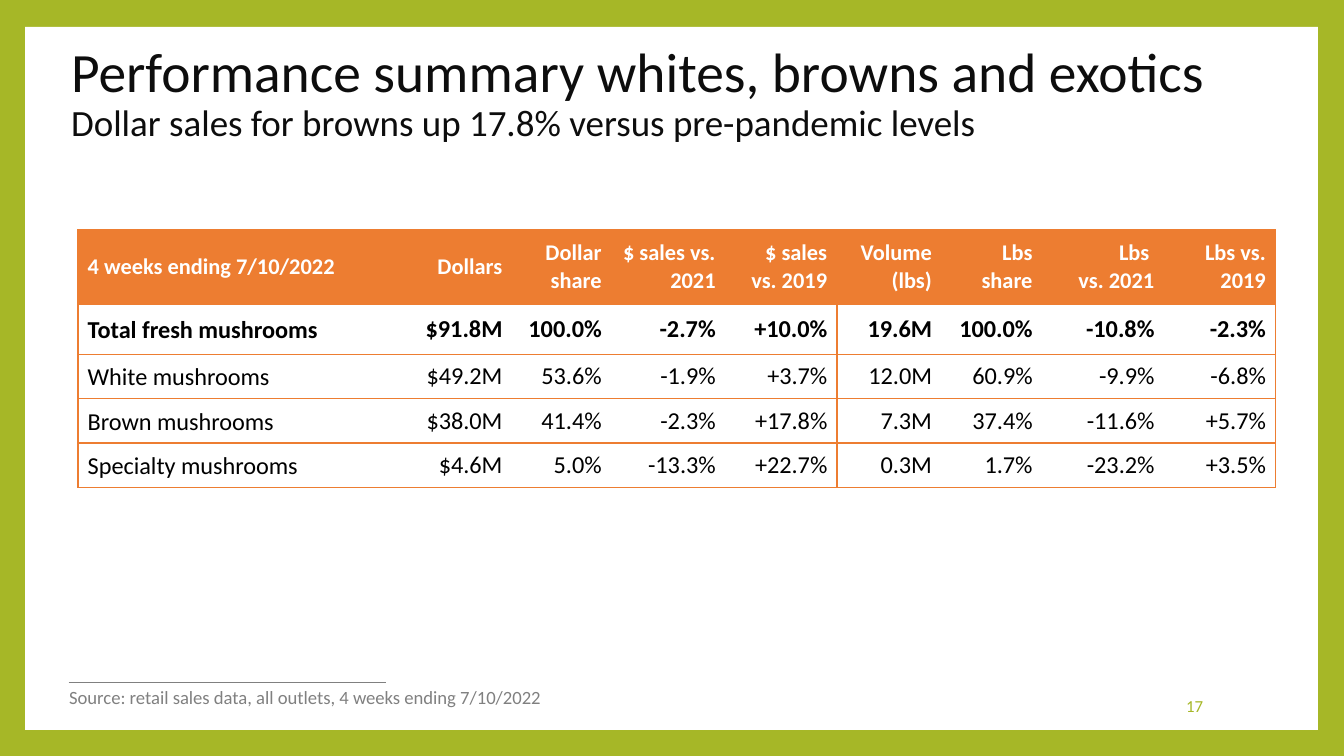
from lxml import etree
from pptx import Presentation
from pptx import util as u
from pptx.dml.color import RGBColor
from pptx.enum import shapes, text
from pptx.oxml import ns

GREEN, ORANGE, GREY = "A6B727", "ED7D31", "808080"
WHITE, BLACK, TITLE_COLOR = "FFFFFF", "000000", "0D0D0D"
LEFT, RIGHT = text.PP_ALIGN.LEFT, text.PP_ALIGN.RIGHT


def color(value):
    return RGBColor.from_string(value)


def write(frame, content, sizes, font_color, bold=False, align=LEFT, spacing=None):
    """Newlines part paragraphs, vertical tabs part lines; sizes go line by line."""
    frame.vertical_anchor = text.MSO_ANCHOR.MIDDLE
    for index, lines in enumerate(content.split("\n")):
        paragraph = frame.add_paragraph() if index else frame.paragraphs[0]
        paragraph.alignment = align
        paragraph.line_spacing = spacing
        for number, line in enumerate(lines.split("\v")):
            if number:
                paragraph.add_line_break()
            run = paragraph.add_run()
            run.text = line
            run.font.name = "Calibri"
            run.font.size = u.Pt(sizes[number % len(sizes)])
            run.font.bold = bold
            run.font.color.rgb = color(font_color)


presentation = Presentation()
presentation.slide_width, presentation.slide_height = u.Pt(720), u.Pt(405)
slide = presentation.slides.add_slide(presentation.slide_layouts[6])
slide.background.fill.solid()
slide.background.fill.fore_color.rgb = color(GREEN)

panel = slide.shapes.add_shape(
    shapes.MSO_SHAPE.RECTANGLE, u.Pt(13.5), u.Pt(14.4), u.Pt(692.5), u.Pt(376.6))
panel.shadow.inherit = False
panel.fill.solid()
panel.fill.fore_color.rgb = color(WHITE)
panel.line.fill.background()

source_rule = slide.shapes.add_connector(
    shapes.MSO_CONNECTOR.STRAIGHT, u.Pt(36.8), u.Pt(365.6), u.Pt(206.8), u.Pt(365.6))
source_rule.line.color.rgb = color(GREY)
source_rule.line.width = u.Pt(0.79)
etree.SubElement(source_rule._element.spPr, ns.qn("a:effectLst"))

# Left, top, width, height, wrap, content, sizes, colour, alignment, line spacing
text_boxes = [
    (31, 22.3, 674.6, 56.9, True,
     "Performance summary whites, browns and exotics\v"
     "Dollar sales for browns up 17.8% versus pre-pandemic levels",
     [29.7, 19.8], TITLE_COLOR, LEFT, 0.9),
    (550.8, 367.2, 100.8, 21.6, True, "17", [9], GREEN, RIGHT, None),
    (30, 363.8, 276.5, 19.4, False,
     "Source: retail sales data, all outlets, 4 weeks ending 7/10/2022",
     [10], GREY, LEFT, None),
]
for left, top, width, height, wrap, content, sizes, font_color, align, spacing in text_boxes:
    box = slide.shapes.add_textbox(u.Pt(left), u.Pt(top), u.Pt(width), u.Pt(height))
    box.text_frame.word_wrap = wrap
    write(box.text_frame, content, sizes, font_color, align=align, spacing=spacing)

rows = [
    ["4 weeks ending 7/10/2022", "Dollars", "Dollar share", "$ sales vs. 2021",
     "$ sales vs. 2019", "Volume (lbs)", "Lbs\nshare", "Lbs \vvs. 2021", "Lbs vs. 2019"],
    ["Total fresh mushrooms", "$91.8M", "100.0%", "-2.7%", "+10.0%",
     "19.6M", "100.0%", "-10.8%", "-2.3%"],
    ["White mushrooms", "$49.2M", "53.6%", "-1.9%", "+3.7%",
     "12.0M", "60.9%", "-9.9%", "-6.8%"],
    ["Brown mushrooms", "$38.0M", "41.4%", "-2.3%", "+17.8%",
     "7.3M", "37.4%", "-11.6%", "+5.7%"],
    ["Specialty mushrooms", "$4.6M", "5.0%", "-13.3%", "+22.7%",
     "0.3M", "1.7%", "-23.2%", "+3.5%"],
]
column_widths = [170.6, 61.9, 53.2, 61.1, 59.8, 56.1, 53.9, 65.3, 59.7]
row_heights = [39.6, 27.1, 23.8, 23.8, 23.8]
group_starts, group_ends = (0, 5), (4, 8)

table = slide.shapes.add_table(
    len(rows), len(column_widths), u.Pt(41.8), u.Pt(123.1),
    u.Pt(sum(column_widths)), u.Pt(sum(row_heights))).table
for column, width in zip(table.columns, column_widths):
    column.width = u.Pt(width)
for row, height in zip(table.rows, row_heights):
    row.height = u.Pt(height)

for row_index, values in enumerate(rows):
    header = row_index == 0
    for column_index, value in enumerate(values):
        label = column_index == 0
        cell = table.cell(row_index, column_index)
        cell.margin_left = cell.margin_right = u.Pt(5.2)
        cell.margin_top = cell.margin_bottom = 0
        cell.vertical_anchor = text.MSO_ANCHOR.MIDDLE
        write(cell.text_frame, value, [12 if header else 13],
              WHITE if header else BLACK, bold=row_index < 2,
              align=LEFT if label else RIGHT,
              spacing=1.07 if label and not header else None)

        borders = {"lnL": column_index in group_starts,
                   "lnR": column_index in group_ends, "lnT": True, "lnB": True}
        properties = cell._tc.get_or_add_tcPr()
        for side, visible in borders.items():
            border = etree.SubElement(properties, ns.qn("a:" + side), w=str(u.Pt(1)))
            if visible:
                fill = etree.SubElement(border, ns.qn("a:solidFill"))
                etree.SubElement(fill, ns.qn("a:srgbClr"), val=ORANGE)
            else:
                etree.SubElement(border, ns.qn("a:noFill"))
        if header:
            cell.fill.solid()
            cell.fill.fore_color.rgb = color(ORANGE)
        else:
            cell.fill.background()

presentation.save("out.pptx")
